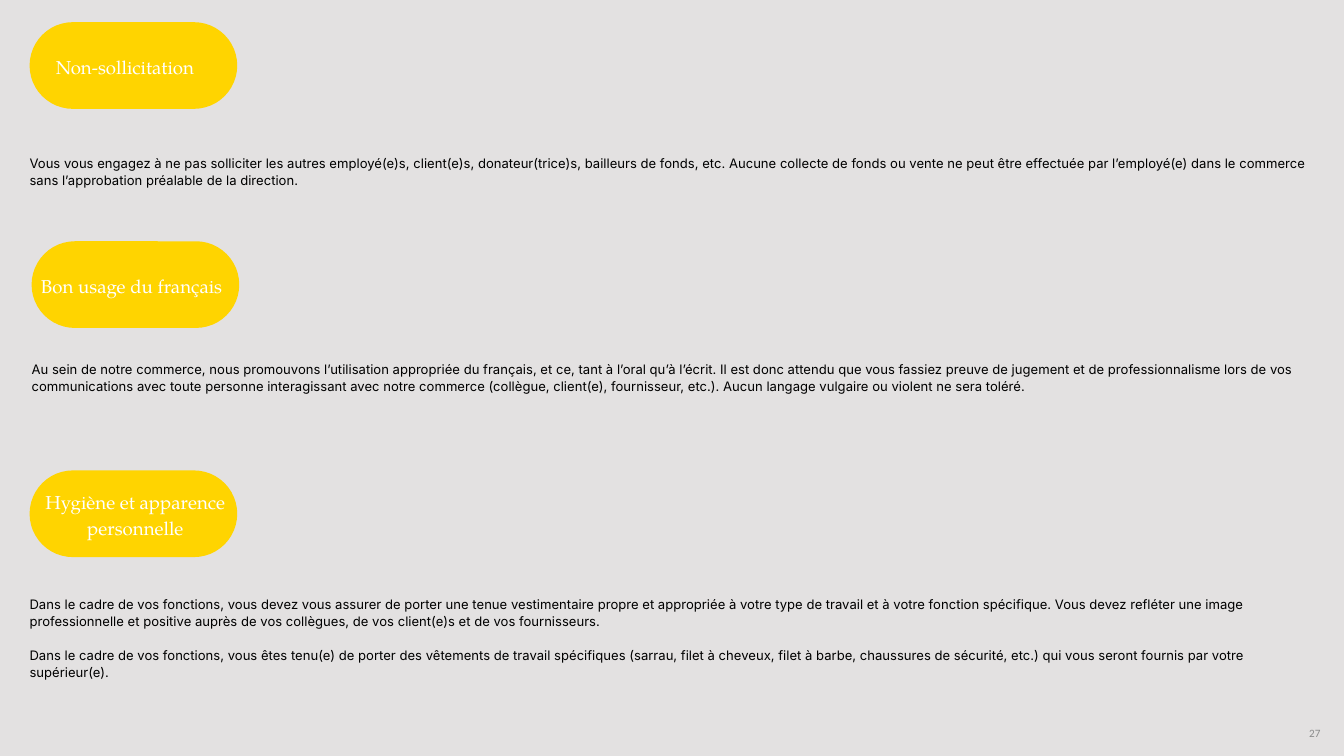
import pptx
import pptx.dml.color
import pptx.enum.shapes
import pptx.enum.text
import pptx.util

COLUMNS, ROWS = 200, 112.5
COLORS = {"background": "E3E1E1", "pill": "FFD400", "heading": "FFFFFF",
          "body": "000000", "number": "8C8C8C"}
ALIGN = pptx.enum.text.PP_ALIGN
PILL_WIDTH, PILL_HEIGHT = 30.9, 12.9
HEADING_LINE = 28
BODY_LINE = 18.2

SECTIONS = [
    {"box": (4.4, 3.3, 191.3), "heading": "Non-sollicitation", "heading_lines": 1,
     "heading_left": 3.9, "heading_width": 23.9, "align": ALIGN.LEFT, "body_top": 19.6,
     "body": ["Vous vous engagez à ne pas solliciter les autres employé(e)s, client(e)s, "
              "donateur(trice)s, bailleurs de fonds, etc. Aucune collecte de fonds ou vente ne "
              "peut être effectuée par l’employé(e) dans le commerce sans l’approbation "
              "préalable de la direction."]},
    {"box": (4.7, 35.9, 190.9), "heading": "Bon usage du français", "heading_lines": 1,
     "heading_left": 1.4, "heading_width": 28.3, "align": ALIGN.LEFT, "body_top": 17.7,
     "body": ["Au sein de notre commerce, nous promouvons l’utilisation appropriée du français, "
              "et ce, tant à l’oral qu’à l’écrit. Il est donc attendu que vous fassiez preuve de "
              "jugement et de professionnalisme lors de vos communications avec toute personne "
              "interagissant avec notre commerce (collègue, client(e), fournisseur, etc.). Aucun "
              "langage vulgaire ou violent ne sera toléré."]},
    {"box": (4.4, 70, 191.3), "heading": "Hygiène et apparence personnelle", "heading_lines": 2,
     "heading_left": 1.9, "heading_width": 27.7, "align": ALIGN.CENTER, "body_top": 18.5,
     "body": ["Dans le cadre de vos fonctions, vous devez vous assurer de porter une tenue "
              "vestimentaire propre et appropriée à votre type de travail et à votre fonction "
              "spécifique. Vous devez refléter une image professionnelle et positive auprès de "
              "vos collègues, de vos client(e)s et de vos fournisseurs.",
              "Dans le cadre de vos fonctions, vous êtes tenu(e) de porter des vêtements de "
              "travail spécifiques (sarrau, filet à cheveux, filet à barbe, chaussures de "
              "sécurité, etc.) qui vous seront fournis par votre supérieur(e)."]},
]


def color(name):
    """Return a palette colour."""
    return pptx.dml.color.RGBColor.from_string(COLORS[name])


def grid(*cells):
    """Turn grid columns and rows into lengths."""
    return [pptx.util.Inches(cell / 10) for cell in cells]


def add_text(slide, box, texts, font, size, color_name, line=None, align=ALIGN.LEFT):
    """Add a text box without margins, its paragraphs one line apart."""
    shape = slide.shapes.add_textbox(*grid(*box))
    frame = shape.text_frame
    frame.word_wrap = True
    frame.margin_left = frame.margin_top = frame.margin_right = frame.margin_bottom = 0
    for index, text in enumerate(texts):
        paragraph = frame.paragraphs[0] if index == 0 else frame.add_paragraph()
        paragraph.alignment = align
        if line:
            paragraph.line_spacing = pptx.util.Pt(line)
            if index:
                paragraph.space_before = pptx.util.Pt(line)
        run = paragraph.add_run()
        run.text = text
        run.font.name = font
        run.font.size = pptx.util.Pt(size)
        run.font.color.rgb = color(color_name)
    return frame


def add_section(slide, section):
    """Add a heading pill with its body text below."""
    left, top, width = section["box"]
    pill = slide.shapes.add_shape(pptx.enum.shapes.MSO_SHAPE.ROUNDED_RECTANGLE,
                                  *grid(left, top, PILL_WIDTH, PILL_HEIGHT))
    pill.adjustments[0] = 0.5
    pill.shadow.inherit = False
    pill.fill.solid()
    pill.fill.fore_color.rgb = color("pill")
    pill.line.fill.background()

    height = 4 * section["heading_lines"] - 0.4
    heading_box = (left + section["heading_left"], top + 6.25 - height / 2,
                   section["heading_width"], height)
    add_text(slide, heading_box, [section["heading"]], "TeX Gyre Pagella", 20, "heading",
             HEADING_LINE, section["align"])

    body_height = 5 if len(section["body"]) == 1 else 12.5
    add_text(slide, (left, top + section["body_top"], width, body_height), section["body"],
             "Inter", 14, "body", BODY_LINE)


def add_page_number(slide, box, number):
    """Add the page number at the right of its box."""
    frame = add_text(slide, box, [number], "Calibri", 12, "number", align=ALIGN.RIGHT)
    frame.margin_left = frame.margin_right = pptx.util.Inches(0.1)
    frame.vertical_anchor = pptx.enum.text.MSO_ANCHOR.MIDDLE


def main():
    """Build and save the presentation."""
    presentation = pptx.Presentation()
    presentation.slide_width, presentation.slide_height = grid(COLUMNS, ROWS)
    slide = presentation.slides.add_slide(presentation.slide_layouts[6])
    slide.background.fill.solid()
    slide.background.fill.fore_color.rgb = color("background")
    for section in SECTIONS:
        add_section(slide, section)
    add_page_number(slide, (174.2, 107.1, 23.3, 4), "27")
    presentation.save("out.pptx")


if __name__ == "__main__":
    main()
